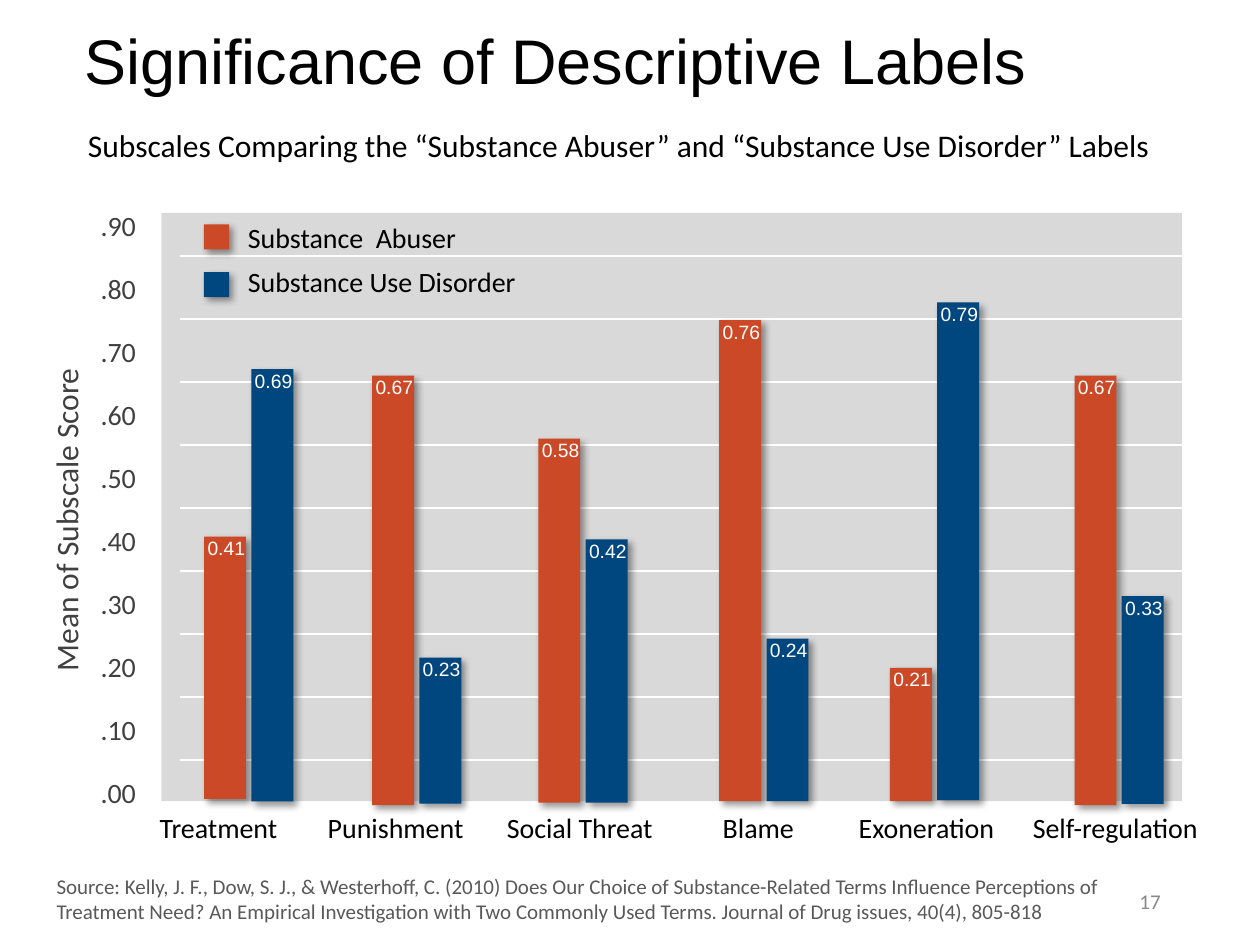
import dataclasses

import lxml.etree
import pptx
import pptx.dml.color
import pptx.enum.shapes
import pptx.enum.text
import pptx.oxml.ns
import pptx.util

Pt = pptx.util.Pt
qn = pptx.oxml.ns.qn
Align = pptx.enum.text.PP_ALIGN
Anchor = pptx.enum.text.MSO_ANCHOR


@dataclasses.dataclass(frozen=True)
class Theme:
    heading_font: str = "Arial"
    body_font: str = "Calibri"
    title_size: int = 36
    subtitle_size: int = 18
    label_size: int = 16
    source_size: int = 12
    value_size: int = 11
    black: str = "000000"
    white: str = "FFFFFF"
    axis: str = "404040"
    source: str = "595959"
    number: str = "898989"
    plot: str = "D9D9D9"
    abuser: str = "CC4927"
    disorder: str = "00467F"


class SlideBuilder:
    def __init__(self, slide, theme):
        self.slide = slide
        self.theme = theme

    def color(self, value):
        return pptx.dml.color.RGBColor.from_string(value)

    def style(self, paragraph, size, color, font):
        paragraph.font.size = Pt(size)
        paragraph.font.name = font
        paragraph.font.color.rgb = self.color(color)

    def title(self, text, left, top, width, height):
        shape = self.slide.shapes.title
        shape.left, shape.top, shape.width, shape.height = map(Pt, (left, top, width, height))
        frame = shape.text_frame
        frame.text = text
        frame.auto_size = pptx.enum.text.MSO_AUTO_SIZE.NONE
        frame.vertical_anchor = Anchor.MIDDLE
        paragraph = frame.paragraphs[0]
        paragraph.alignment = Align.LEFT
        paragraph.line_spacing = 0.9
        self.style(paragraph, self.theme.title_size, self.theme.black, self.theme.heading_font)

    def text(self, lines, left, top, width, height, size, color, font=None,
             align=Align.LEFT, anchor=Anchor.TOP, spacing=None, inset=None, tabs=()):
        shape = self.slide.shapes.add_textbox(*map(Pt, (left, top, width, height)))
        frame = shape.text_frame
        frame.word_wrap = True
        frame.vertical_anchor = anchor
        if inset is not None:
            frame.margin_left = frame.margin_right = Pt(inset)
            frame.margin_top = frame.margin_bottom = Pt(inset)
        frame.text = lines
        for paragraph in frame.paragraphs:
            paragraph.alignment = align
            if spacing:
                paragraph.line_spacing = Pt(spacing)
            if tabs:
                properties = paragraph._p.get_or_add_pPr()
                tab_list = lxml.etree.SubElement(properties, qn("a:tabLst"))
                for position in tabs:
                    lxml.etree.SubElement(tab_list, qn("a:tab"), pos=str(Pt(position)), algn="l")
            self.style(paragraph, size, color, font or self.theme.body_font)
        return shape

    def rectangle(self, left, top, width, height, color, shadow=True):
        kind = pptx.enum.shapes.MSO_SHAPE.RECTANGLE
        shape = self.slide.shapes.add_shape(kind, *map(Pt, (left, top, width, height)))
        shape.fill.solid()
        shape.fill.fore_color.rgb = self.color(color)
        shape.line.fill.background()
        shape.shadow.inherit = False
        if shadow:
            effects = shape._element.spPr.find(qn("a:effectLst"))
            outer = lxml.etree.SubElement(
                effects, qn("a:outerShdw"), blurRad=str(Pt(4)), dist=str(Pt(3)),
                dir="2700000", algn="tl", rotWithShape="0")
            black = lxml.etree.SubElement(outer, qn("a:srgbClr"), val=self.theme.black)
            lxml.etree.SubElement(black, qn("a:alpha"), val="40000")

    def gridline(self, left, right, top):
        kind = pptx.enum.shapes.MSO_CONNECTOR.STRAIGHT
        line = self.slide.shapes.add_connector(kind, *map(Pt, (left, top, right, top)))
        line.line.color.rgb = self.color(self.theme.white)
        line.line.width = Pt(1.5)
        lxml.etree.SubElement(line._element.spPr, qn("a:effectLst"))


CATEGORIES = [
    ("Treatment", 0, 116.6, ("0.41", 306.7, 149.8), ("0.69", 211, 247)),
    ("Punishment", 96, 212.6, ("0.67", 214.6, 245.5), ("0.23", 375.8, 83.5)),
    ("Social Threat", 198.3, 307.6, ("0.58", 250.6, 208.1), ("0.42", 308.2, 150.5)),
    ("Blame", 321.7, 411, ("0.76", 182.9, 275), ("0.24", 365, 92.9)),
    ("Exoneration", 399.4, 508.5, ("0.21", 381.6, 76.3), ("0.79", 172.8, 284.4)),
    ("Self-regulation", 498.9, 614, ("0.67", 214.6, 245.5), ("0.33", 340.6, 118.8)),
]


def main():
    presentation = pptx.Presentation()
    presentation.slide_width, presentation.slide_height = Pt(720), Pt(540)
    theme = Theme()
    slide = presentation.slides.add_slide(presentation.slide_layouts[5])
    builder = SlideBuilder(slide, theme)

    builder.rectangle(92.2, 121.7, 583.2, 336.2, theme.plot, shadow=False)
    for row in range(9):
        builder.gridline(103, 685.4, 146.2 + 36 * row)

    builder.title("Significance of Descriptive Labels", 41, 26.6, 620.6, 20.2)
    builder.text("Subscales Comparing the “Substance Abuser” and “Substance Use Disorder” Labels",
                 43.2, 68.4, 636.5, 29, theme.subtitle_size, theme.black)
    builder.text("17", 508.3, 500.4, 162, 28.8, theme.source_size, theme.number,
                 align=Align.RIGHT, anchor=Anchor.MIDDLE)

    ticks = "\n".join(f".{tick}0" for tick in range(9, -1, -1))
    builder.text(ticks, 50.4, 98.6, 48.2, 365.8, theme.label_size, theme.axis, spacing=36)
    axis_title = builder.text("Mean of Subscale Score", -97.9, 240.5, 271.4, 29,
                              theme.subtitle_size, theme.axis)
    axis_title.rotation = 270
    builder.text("\t".join(category[0] for category in CATEGORIES), 84.2, 459.4, 610.6, 26.6,
                 theme.label_size, theme.black, tabs=[category[1] for category in CATEGORIES[1:]])
    builder.text("Source: Kelly, J. F., Dow, S. J., & Westerhoff, C. (2010) Does Our Choice of "
                 "Substance-Related Terms Influence Perceptions of Treatment Need? An Empirical "
                 "Investigation with Two Commonly Used Terms. Journal of Drug issues, 40(4), 805-818",
                 25.2, 495.4, 618.5, 36.7, theme.source_size, theme.source)

    series_colors = (theme.abuser, theme.disorder)
    bars = [
        (left + 27 * index, top, height, value, series_colors[index])
        for _, _, left, *pair in CATEGORIES
        for index, (value, top, height) in enumerate(pair)
    ]
    for left, top, height, _, color in bars:
        builder.rectangle(left, top, 24, height, color)
    for left, top, _, value, _ in bars:
        builder.text(value, left + 2, top, 25, 13.3, theme.value_size, theme.white,
                     font=theme.heading_font, inset=0)

    legend = [
        ("Substance  Abuser", 128.2, 122.4, theme.abuser),
        ("Substance Use Disorder", 155.5, 147.6, theme.disorder),
    ]
    for name, marker_top, text_top, color in legend:
        builder.rectangle(116.6, marker_top, 14.4, 14.4, color)
        builder.text(name, 134.6, text_top, 183.6, 26.6, theme.label_size, theme.black)

    presentation.save("out.pptx")


if __name__ == "__main__":
    main()
